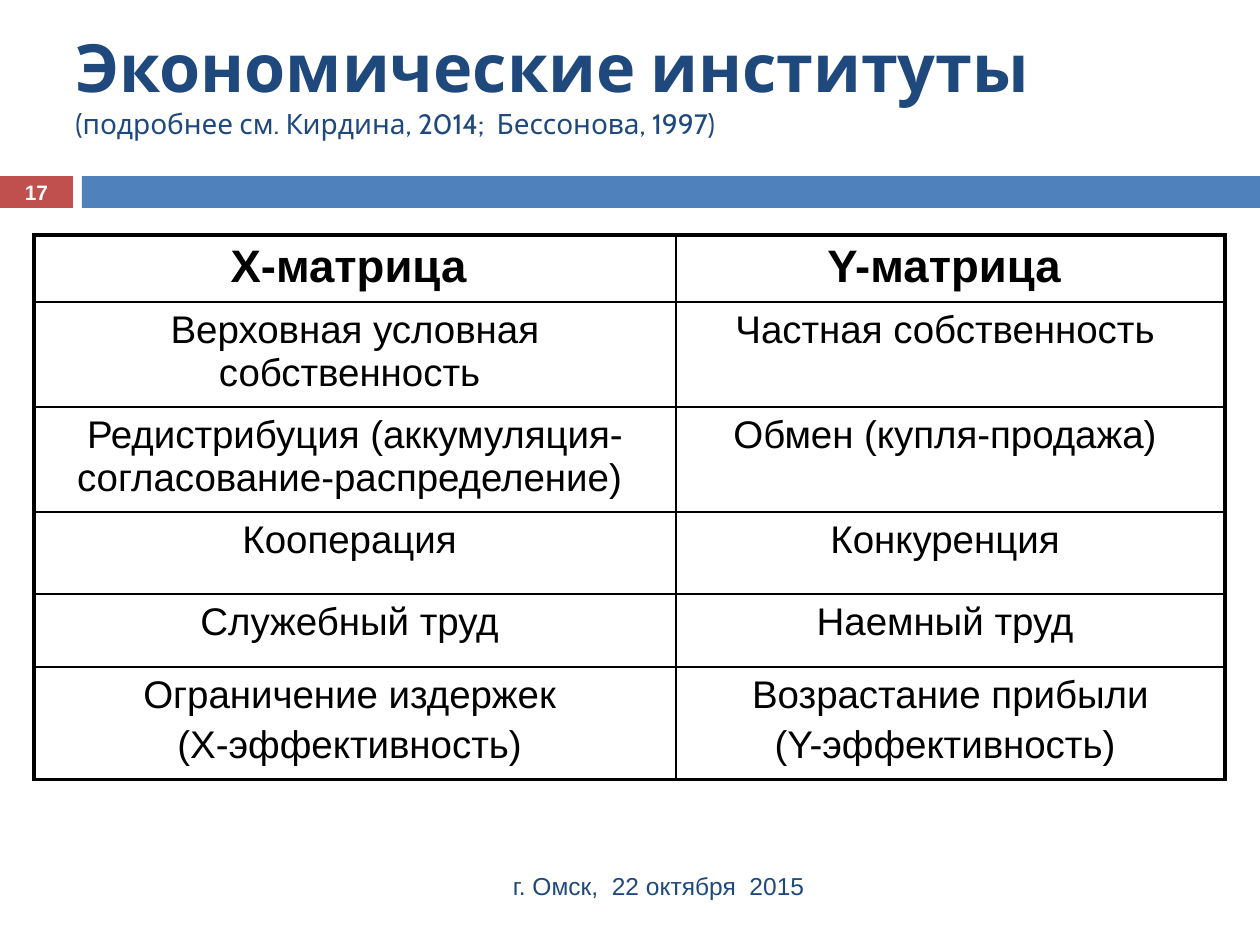
from lxml import etree
from pptx import Presentation
from pptx.dml.color import RGBColor
from pptx.enum.shapes import MSO_SHAPE
from pptx.enum.text import MSO_ANCHOR, PP_ALIGN
from pptx.oxml.ns import qn
from pptx.util import Emu, Pt

RECT = MSO_SHAPE.RECTANGLE
MIDDLE = MSO_ANCHOR.MIDDLE
LEFT, CENTER, RIGHT = PP_ALIGN.LEFT, PP_ALIGN.CENTER, PP_ALIGN.RIGHT
SCALE = 914400 / 126
NAVY, BLUE, RED = "1F497D", "4F81BD", "C0504D"
BLACK, WHITE = "000000", "FFFFFF"
THIN, THICK = 1, 2.25
COLS = [642, 549]
HEIGHTS = [63, 103, 103, 82, 73, 107]
ROWS = [
    ["Х-матрица ", "Y-матрица "],
    ["Верховная условная собственность ", "Частная собственность "],
    ["Редистрибуция (аккумуляция-согласование-распределение) ",
     "Обмен (купля-продажа) "],
    ["Кооперация ", "Конкуренция "],
    ["Служебный труд ", "Наемный труд "],
    ["Ограничение издержек \n(Х-эффективность) ",
     "Возрастание прибыли\n(Y-эффективность) "],
]


def px(n):
    return Emu(round(n * SCALE))


def paint(hue):
    return RGBColor.from_string(hue)


def write(para, text, size=22, font="Arial", hue=BLACK, bold=False, align=CENTER):
    para.alignment = align
    run = para.add_run()
    run.text = text
    run.font.size = Pt(size)
    run.font.name = font
    run.font.bold = bold
    run.font.color.rgb = paint(hue)


def add_bar(slide, x, y, w, h, hue):
    bar = slide.shapes.add_shape(RECT, px(x), px(y), px(w), px(h))
    bar.shadow.inherit = False
    bar.fill.solid()
    bar.fill.fore_color.rgb = paint(hue)
    bar.line.fill.background()


def add_box(slide, x, y, w, h):
    frame = slide.shapes.add_textbox(px(x), px(y), px(w), px(h)).text_frame
    frame.word_wrap = True
    frame.vertical_anchor = MIDDLE
    return frame.paragraphs[0]


def add_edge(cell, side, width):
    props = cell._tc.get_or_add_tcPr()
    line = etree.SubElement(props, qn(f"a:ln{side}"), w=str(Pt(width)))
    fill = etree.SubElement(line, qn("a:solidFill"))
    etree.SubElement(fill, qn("a:srgbClr"), val=BLACK)


def fill_cell(cell, text, edges, **form):
    for side, outer in edges.items():
        add_edge(cell, side, THICK if outer else THIN)
    cell.fill.solid()
    cell.fill.fore_color.rgb = paint(WHITE)
    frame = cell.text_frame
    for i, line in enumerate(text.split("\n")):
        para = frame.add_paragraph() if i else frame.paragraphs[0]
        if i:
            para.space_before = Pt(4)
        write(para, line, **form)


def add_grid(slide, x, y):
    table = slide.shapes.add_table(
        len(ROWS), len(COLS), px(x), px(y), px(sum(COLS)), px(sum(HEIGHTS))
    ).table
    table.first_row = table.horz_banding = False
    for col, width in zip(table.columns, COLS):
        col.width = px(width)
    for r, texts in enumerate(ROWS):
        table.rows[r].height = px(HEIGHTS[r])
        form = {"size": 22} if r else {"size": 26, "bold": True}
        for c, text in enumerate(texts):
            edges = {"L": c == 0, "R": c == len(COLS) - 1,
                     "T": r == 0, "B": r == len(ROWS) - 1}
            fill_cell(table.cell(r, c), text, edges, **form)


def main():
    deck = Presentation()
    deck.slide_width, deck.slide_height = px(1260), px(945)
    slide = deck.slides.add_slide(deck.slide_layouts[6])
    add_bar(slide, 0, 176, 73, 32, RED)
    add_bar(slide, 82, 176, 1178, 32, BLUE)
    title = add_box(slide, 63, 16, 1040, 134)
    write(title, "Экономические институты", size=38, font="Cabin",
          hue=NAVY, bold=True, align=LEFT)
    title.add_line_break()
    write(title, "(подробнее см. Кирдина, 2014;  Бессонова, 1997)", size=16,
          font="Cabin", hue=NAVY, align=LEFT)
    write(add_box(slide, 84, 861, 733, 50), "г. Омск,  22 октября  2015",
          size=14, hue=NAVY, align=RIGHT)
    write(add_box(slide, 0, 175, 73, 34), "17", size=11.9, hue=WHITE, bold=True)
    add_grid(slide, 34, 235)
    deck.save("out.pptx")


if __name__ == "__main__":
    main()
